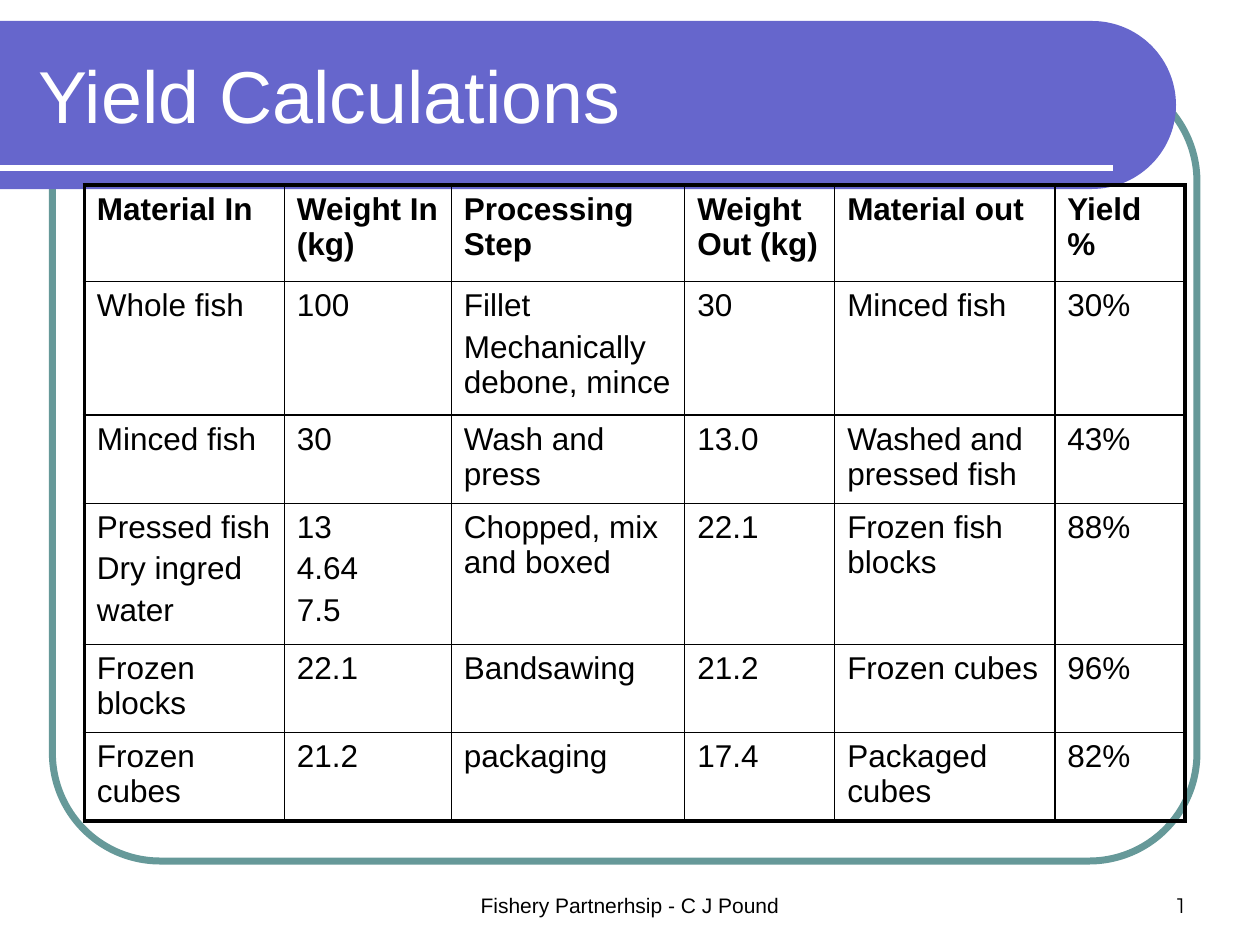
from dataclasses import dataclass
from math import cos, pi, sin

from lxml.etree import SubElement as Sub
from pptx import Presentation as Deck
from pptx.dml.color import RGBColor as Color
from pptx.enum.shapes import MSO_CONNECTOR as Link, MSO_SHAPE as Form
from pptx.enum.text import MSO_ANCHOR as Anchor, PP_ALIGN as Align
from pptx.oxml.ns import qn
from pptx.util import Pt


@dataclass(frozen=True)
class Theme:
    ink: str = "000000"
    paper: str = "FFFFFF"
    band: str = "6666CC"
    frame: str = "669999"
    font: str = "Arial"
    digit: str = "Montserrat"
    title: float = 42
    body: float = 18
    small: float = 12
    thin: float = 1
    thick: float = 2.25


HEAD = ["Material In", "Weight In (kg)", "Processing Step",
        "Weight Out (kg)", "Material out", "Yield %"]
STEPS = [
    ["Whole fish", "100", "Fillet\nMechanically debone, mince", "30", "Minced fish", "30%"],
    ["Minced fish", "30", "Wash and press", "13.0", "Washed and pressed fish", "43%"],
    ["Pressed fish\nDry ingred\nwater", "13\n4.64\n7.5", "Chopped, mix and boxed",
     "22.1", "Frozen fish blocks", "88%"],
    ["Frozen blocks", "22.1", "Bandsawing", "21.2", "Frozen cubes", "96%"],
    ["Frozen cubes", "21.2", "packaging", "17.4", "Packaged cubes", "82%"],
]
WIDTHS = [114.3, 95.4, 133.4, 85.7, 125.8, 74.5]
HEIGHTS = [55.2, 76.3, 50.4, 80.6, 50.4, 50.4]


def write(frame, text, *, size, color, font, bold=False, align=Align.LEFT, gap=0):
    frame.word_wrap = True
    for i, line in enumerate(text.split("\n")):
        para = frame.add_paragraph() if i else frame.paragraphs[0]
        para.alignment = align
        para.space_before = Pt(gap)
        run = para.add_run()
        run.text = line
        run.font.size = Pt(size)
        run.font.name = font
        run.font.bold = bold
        run.font.color.rgb = Color.from_string(color)


class Board:
    def __init__(self, slide, theme):
        self.slide = slide
        self.theme = theme

    def frame(self, x, y, w, h, curve, width):
        shape = self.slide.shapes.add_shape(
            Form.ROUNDED_RECTANGLE, Pt(x), Pt(y), Pt(w), Pt(h))
        shape.adjustments[0] = curve
        shape.shadow.inherit = False
        shape.fill.background()
        shape.line.color.rgb = Color.from_string(self.theme.frame)
        shape.line.width = Pt(width)

    def band(self, top, right, height, steps=60):
        r = height / 2
        turns = [pi * (i / steps - 0.5) for i in range(steps + 1)]
        arc = [(Pt(right - r + r * cos(t)), Pt(top + r + r * sin(t))) for t in turns]
        pen = self.slide.shapes.build_freeform(0, Pt(top))
        pen.add_line_segments(arc + [(0, Pt(top + height))], close=True)
        shape = pen.convert_to_shape()
        shape.shadow.inherit = False
        shape.fill.solid()
        shape.fill.fore_color.rgb = Color.from_string(self.theme.band)
        shape.line.fill.background()

    def rule(self, x, y, end, width):
        line = self.slide.shapes.add_connector(
            Link.STRAIGHT, Pt(x), Pt(y), Pt(end), Pt(y))
        line.line.color.rgb = Color.from_string(self.theme.paper)
        line.line.width = Pt(width)
        Sub(line._element.spPr, qn("a:effectLst"))

    def text(self, x, y, w, h, words, *, anchor=Anchor.BOTTOM, **style):
        box = self.slide.shapes.add_textbox(Pt(x), Pt(y), Pt(w), Pt(h))
        box.text_frame.vertical_anchor = anchor
        write(box.text_frame, words, **style)

    def edge(self, cell, side, width):
        line = Sub(cell._tc.get_or_add_tcPr(), qn(f"a:ln{side}"), w=str(Pt(width)))
        fill = Sub(line, qn("a:solidFill"))
        Sub(fill, qn("a:srgbClr"), val=self.theme.ink)

    def table(self, x, y, rows, widths, heights):
        t = self.theme
        grid = self.slide.shapes.add_table(
            len(rows), len(widths), Pt(x), Pt(y), Pt(sum(widths)), Pt(sum(heights))).table
        grid.horz_banding = False
        for col, width in zip(grid.columns, widths):
            col.width = Pt(width)
        for row, height in zip(grid.rows, heights):
            row.height = Pt(height)
        for r, row in enumerate(rows):
            for c, words in enumerate(row):
                cell = grid.cell(r, c)
                write(cell.text_frame, words, size=t.body, color=t.ink,
                      font=t.font, bold=r == 0, gap=3.6)
                outer = {"L": c == 0, "R": c == len(row) - 1,
                         "T": r == 0, "B": r == len(rows) - 1}
                for side, edge in outer.items():
                    self.edge(cell, side, t.thick if edge else t.thin)
                cell.fill.background()


def main():
    deck = Deck()
    deck.slide_width, deck.slide_height = Pt(720), Pt(540)
    t = Theme()
    board = Board(deck.slides.add_slide(deck.slide_layouts[6]), t)

    board.frame(30, 42, 654, 450, 0.137, 4)
    board.band(12, 672, 96)
    board.rule(0, 96, 636, 3)
    board.text(246, 492, 228, 36, "Fishery Partnerhsip - C J Pound",
               size=t.small, color=t.ink, font=t.font, align=Align.CENTER)
    board.text(516, 492, 168, 36, "1",
               size=t.small, color=t.ink, font=t.digit, align=Align.RIGHT)
    board.text(15, 18, 631.5, 72, "Yield Calculations", anchor=Anchor.MIDDLE,
               size=t.title, color=t.paper, font=t.font)
    board.table(48.2, 105.8, [HEAD] + STEPS, WIDTHS, HEIGHTS)
    deck.save("out.pptx")


if __name__ == "__main__":
    main()
